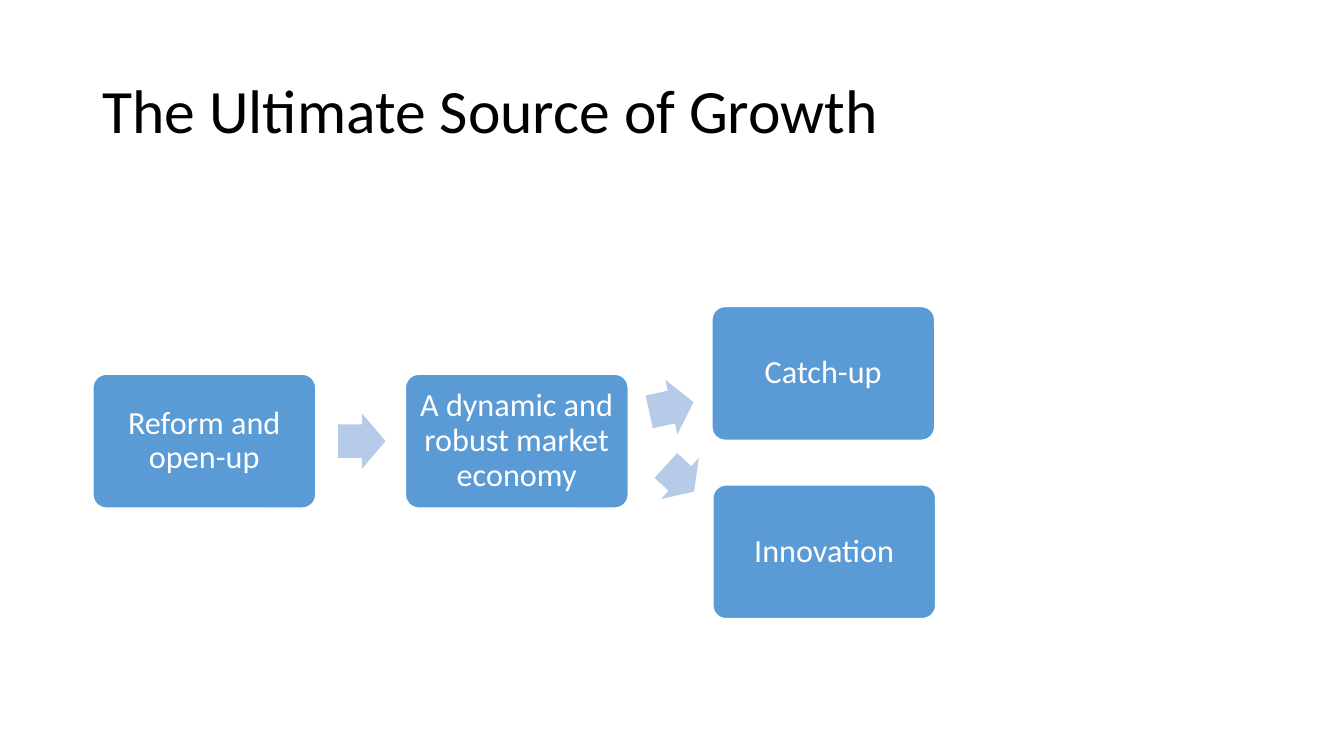
from pptx import Presentation
from pptx.dml.color import RGBColor
from pptx.enum.shapes import MSO_SHAPE as Shape
from pptx.enum.text import MSO_ANCHOR as Anchor, PP_ALIGN as Align
from pptx.util import Pt

STEP_WIDTH, STEP_HEIGHT = 159.2, 95.6
ARROW_HEIGHT = 39.8
STEPS = [
    ("Reform and open-up", 0, 48.4),
    ("A dynamic and robust market economy", 223.2, 48.4),
    ("Catch-up", 442.1, 0),
    ("Innovation", 442.8, 127.4),
]
ARROWS = [
    (175.2, 76.3, 33.8, 0),
    (397, 52, 32.4, 347.6),
    (405.6, 103, 27.4, 42.6),
]


def rgb(value):
    return RGBColor.from_string(value)


def format_text(frame, text, size, color, align):
    frame.text = text
    frame.word_wrap = True
    frame.vertical_anchor = Anchor.MIDDLE
    paragraph = frame.paragraphs[0]
    paragraph.alignment = align
    paragraph.line_spacing = 0.9
    paragraph.font.name = "Calibri"
    paragraph.font.size = Pt(size)
    paragraph.font.color.rgb = rgb(color)


def add_title(slide, left, top, width, height):
    title = slide.shapes.title
    title.left, title.top = Pt(left), Pt(top)
    title.width, title.height = Pt(width), Pt(height)
    format_text(title.text_frame, "The Ultimate Source of Growth", 44, "000000", Align.LEFT)


def add_filled(slide, kind, left, top, width, height, fill):
    shape = slide.shapes.add_shape(kind, Pt(left), Pt(top), Pt(width), Pt(height))
    shape.shadow.inherit = False
    shape.fill.solid()
    shape.fill.fore_color.rgb = rgb(fill)
    return shape


def add_step(slide, text, left, top):
    step = add_filled(slide, Shape.ROUNDED_RECTANGLE, left, top, STEP_WIDTH, STEP_HEIGHT, "5B9BD5")
    step.adjustments[0] = 0.1
    step.line.color.rgb = rgb("FFFFFF")
    step.line.width = Pt(1)
    frame = step.text_frame
    frame.margin_left = frame.margin_right = Pt(7.2)
    frame.margin_top = frame.margin_bottom = Pt(7.2)
    format_text(frame, text, 23, "FFFFFF", Align.CENTER)


def add_arrow(slide, left, top, width, rotation):
    arrow = add_filled(slide, Shape.RIGHT_ARROW, left, top, width, ARROW_HEIGHT, "B5CBE7")
    arrow.adjustments[0] = 0.6
    arrow.adjustments[1] = 0.5
    arrow.line.fill.background()
    arrow.rotation = rotation


def add_growth_flow(slide, left, top):
    for text, x, y in STEPS:
        add_step(slide, text, left + x, top + y)
    for x, y, width, rotation in ARROWS:
        add_arrow(slide, left + x, top + y, width, rotation)


def main():
    deck = Presentation()
    deck.slide_width, deck.slide_height = Pt(960), Pt(540)
    slide = deck.slides.add_slide(deck.slide_layouts[5])
    add_title(slide, 66, 28.8, 828, 104.4)
    add_growth_flow(slide, 66.4, 218.9)
    deck.save("out.pptx")


if __name__ == "__main__":
    main()
